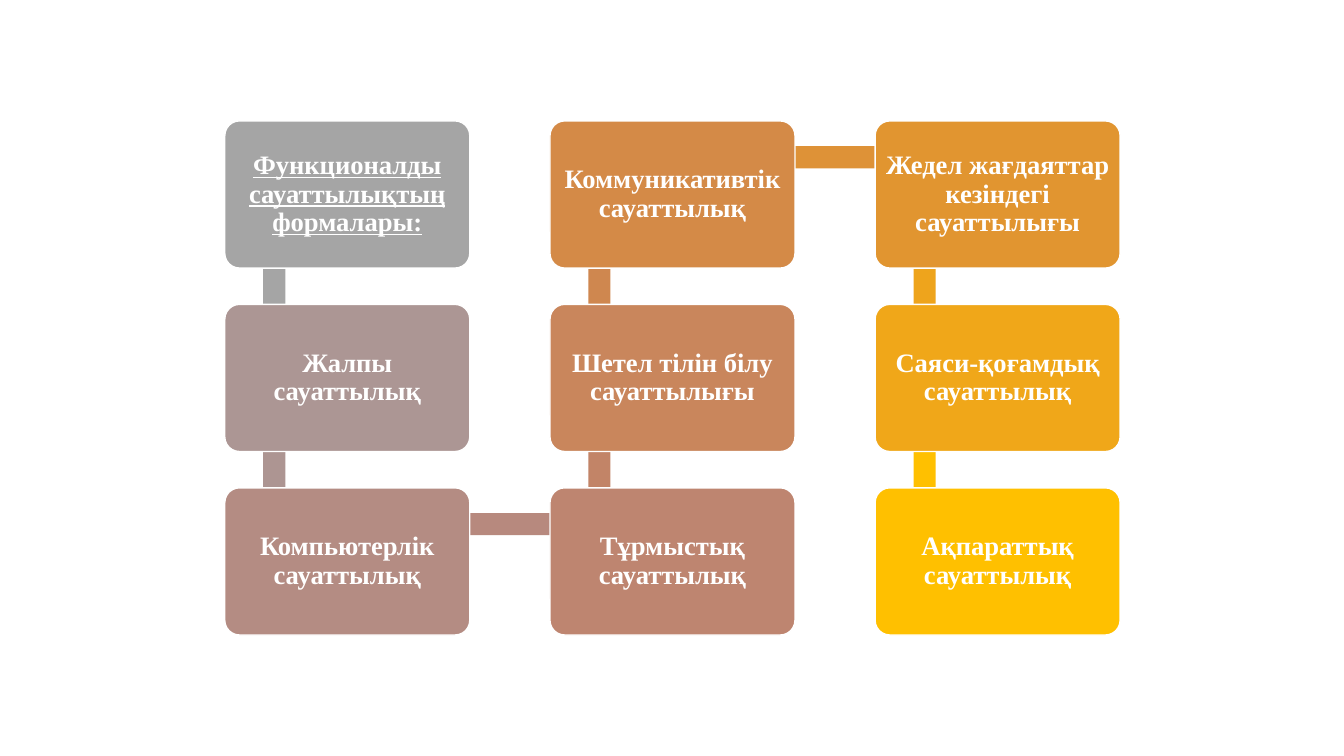
from pptx import Presentation
from pptx.dml.color import RGBColor
from pptx.enum.shapes import MSO_SHAPE
from pptx.enum.text import MSO_ANCHOR, PP_ALIGN
from pptx.util import Inches, Pt

COLORS = {
    "white": "FFFFFF",
    "boxes": ["A5A5A5", "AC9694", "B48C83", "BE8570", "C9865C",
              "D48A47", "E19530", "F0A719", "FFC000"],
    "bars": ["A5A5A5", "AD9592", "B7897E", "C28467", "CF874F",
             "DE9237", "EEA41C", "FFC000"],
}
FORMS = [
    "Функционалды сауаттылықтың формалары:",
    "Жалпы сауаттылық",
    "Компьютерлік сауаттылық",
    "Тұрмыстық сауаттылық",
    "Шетел тілін білу сауаттылығы",
    "Коммуникативтік сауаттылық",
    "Жедел жағдаяттар кезіндегі сауаттылығы",
    "Саяси-қоғамдық сауаттылық",
    "Ақпараттық сауаттылық",
]
ROWS = 3
LEFT, TOP = 2.23, 1.2
BOX_W, BOX_H = 2.43, 1.46
STEP_X, STEP_Y = 3.225, 1.82
BAR_H = 0.22
ANCHOR_X, ANCHOR_Y = 0.49, 0.36


def snake_position(index):
    col, row = divmod(index, ROWS)
    if col % 2:
        row = ROWS - 1 - row
    return LEFT + col * STEP_X, TOP + row * STEP_Y


def add_filled(slide, kind, x, y, w, h, color):
    sp = slide.shapes.add_shape(kind, Inches(x), Inches(y), Inches(w), Inches(h))
    sp.shadow.inherit = False
    sp.fill.solid()
    sp.fill.fore_color.rgb = RGBColor.from_string(color)
    sp.line.fill.background()
    return sp


def write_text(sp, text, size=19, color="white", bold=True, underline=False):
    tf = sp.text_frame
    tf.word_wrap = True
    tf.vertical_anchor = MSO_ANCHOR.MIDDLE
    tf.margin_left = tf.margin_right = Inches(0.04)
    tf.margin_top = tf.margin_bottom = Inches(0.04)
    p = tf.paragraphs[0]
    p.alignment = PP_ALIGN.CENTER
    p.line_spacing = 0.9
    r = p.add_run()
    r.text = text
    r.font.name = "Times New Roman"
    r.font.size = Pt(size)
    r.font.bold = bold
    r.font.underline = underline
    r.font.color.rgb = RGBColor.from_string(COLORS[color])


def add_bar(slide, start, end, color):
    dx, dy = end[0] - start[0], end[1] - start[1]
    length = abs(dx) + abs(dy)
    center_x = start[0] + dx / 2 + ANCHOR_X
    center_y = start[1] + dy / 2 + ANCHOR_Y
    sp = add_filled(slide, MSO_SHAPE.RECTANGLE, center_x - length / 2,
                    center_y - BAR_H / 2, length, BAR_H, color)
    if dy:
        sp.rotation = 90 if dy > 0 else 270


def add_box(slide, position, text, color, **text_format):
    sp = add_filled(slide, MSO_SHAPE.ROUNDED_RECTANGLE, *position, BOX_W, BOX_H, color)
    sp.adjustments[0] = 0.1
    sp.line.color.rgb = RGBColor.from_string(COLORS["white"])
    sp.line.width = Pt(1)
    write_text(sp, text, **text_format)


def main():
    prs = Presentation()
    prs.slide_width = Inches(13.33)
    prs.slide_height = Inches(7.5)
    s = prs.slides.add_slide(prs.slide_layouts[6])
    for i, text in enumerate(FORMS):
        position = snake_position(i)
        if i < len(FORMS) - 1:
            add_bar(s, position, snake_position(i + 1), COLORS["bars"][i])
        add_box(s, position, text, COLORS["boxes"][i], underline=i == 0)
    prs.save("out.pptx")


if __name__ == "__main__":
    main()
